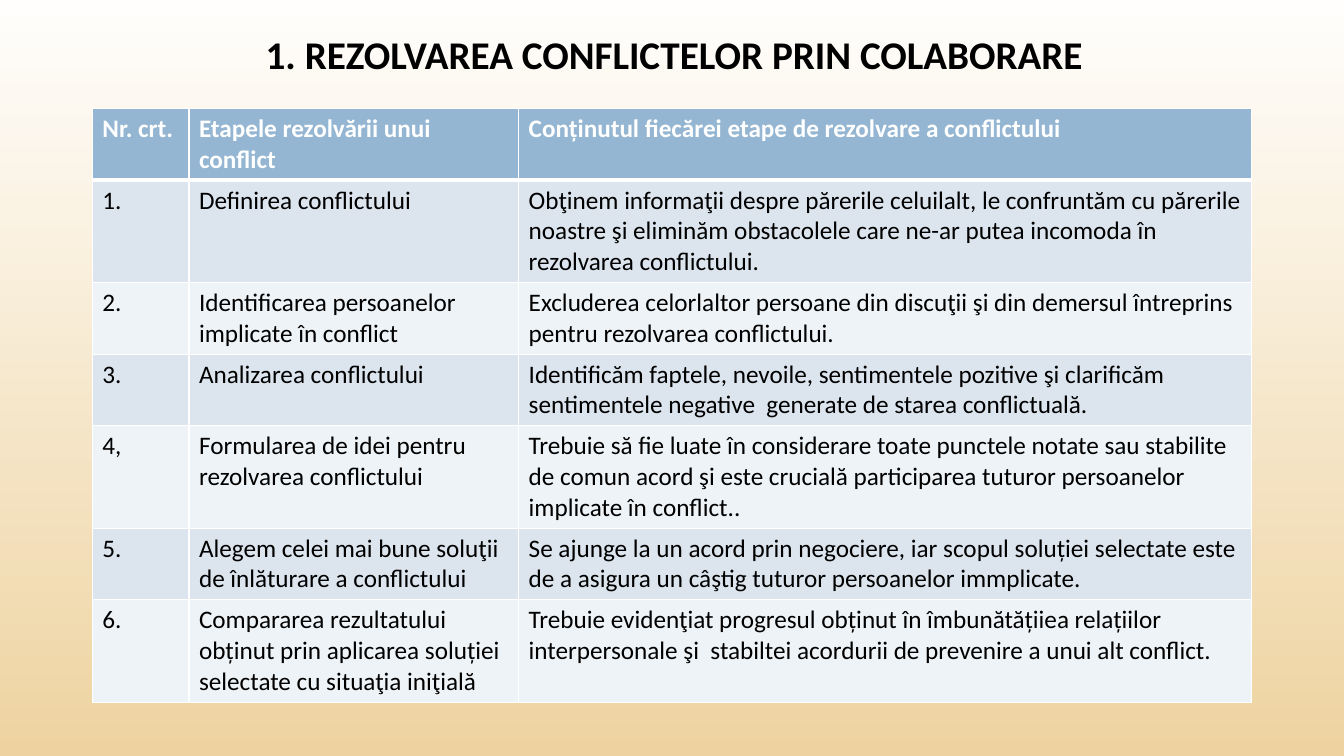
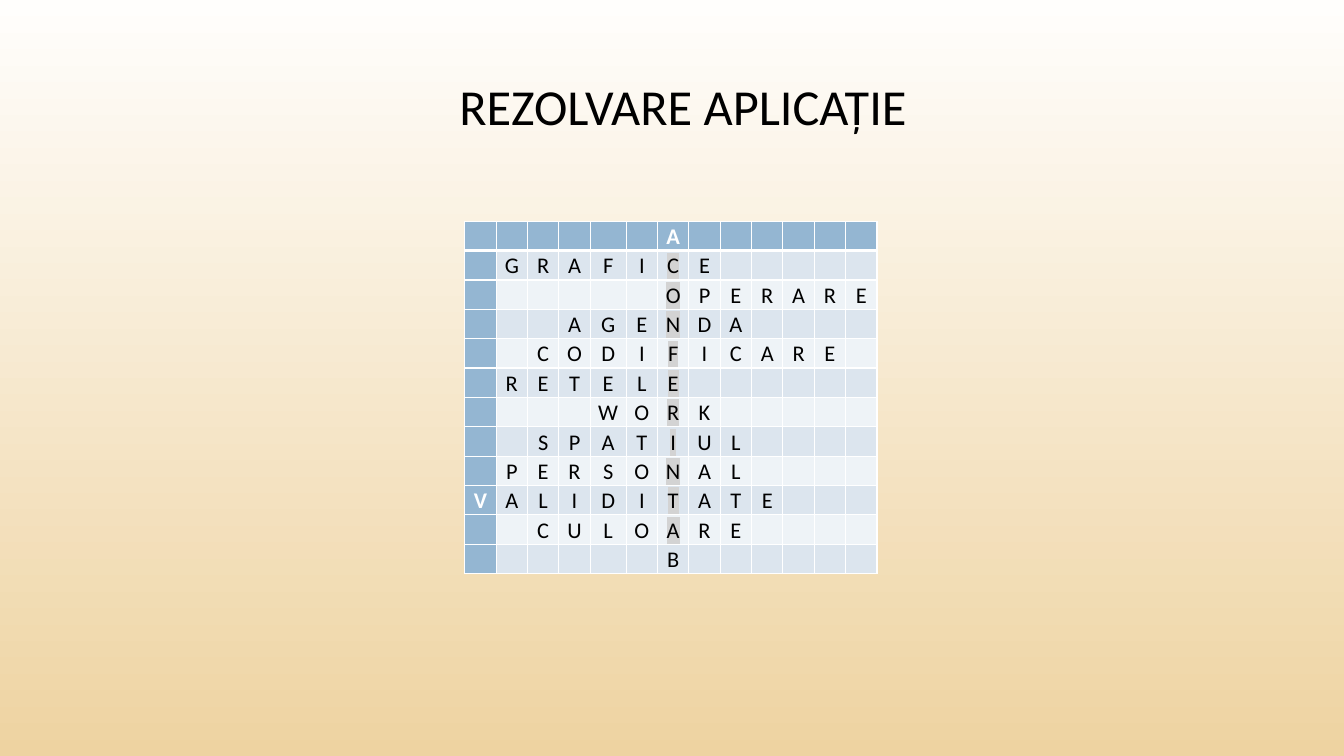
import pptx
import pptx.util
import pptx.dml.color
import pptx.enum.text
import pptx.oxml
import pptx.oxml.ns
from lxml import etree

Pt = pptx.util.Pt
FONT = "Calibri"
WHITE, BLACK = "FFFFFF", "000000"
HEADER, BANDS, HIGHLIGHT = "94B6D2", ("DCE5EE", "EEF3F7"), "D3D3D3"
SKY, SAND = "FFFEFC", "EED3A1"
CENTER = pptx.enum.text.PP_ALIGN.CENTER
MIDDLE = pptx.enum.text.MSO_ANCHOR.MIDDLE

STAGES = [
    ("Nr. crt.", "Etapele rezolvării unui conflict",
     "Conținutul fiecărei etape de rezolvare a conflictului"),
    ("1.", "Definirea conflictului",
     "Obţinem informaţii despre părerile celuilalt, le confruntăm cu părerile noastre şi "
     "eliminăm obstacolele care ne-ar putea incomoda în rezolvarea conflictului."),
    ("2.", "Identificarea persoanelor implicate în conflict",
     "Excluderea celorlaltor persoane din discuţii şi din demersul întreprins pentru "
     "rezolvarea conflictului."),
    ("3.", "Analizarea conflictului",
     "Identificăm faptele, nevoile, sentimentele pozitive şi clarificăm sentimentele "
     "negative  generate de starea conflictuală."),
    ("4,", "Formularea de idei pentru rezolvarea conflictului",
     "Trebuie să fie luate în considerare toate punctele notate sau stabilite de comun "
     "acord şi este crucială participarea tuturor persoanelor implicate în conflict.."),
    ("5.", "Alegem celei mai bune soluţii de înlăturare a conflictului",
     "Se ajunge la un acord prin negociere, iar scopul soluției selectate este de a "
     "asigura un câştig tuturor persoanelor immplicate."),
    ("6.", "Compararea rezultatului obținut prin aplicarea soluției selectate cu situaţia iniţială",
     "Trebuie evidenţiat progresul obținut în îmbunătățiiea relațiilor interpersonale şi  "
     "stabiltei acordurii de prevenire a unui alt conflict."),
]
STAGE_WIDTHS = [69, 235.5, 523.5]
STAGE_HEIGHTS = [51, 73, 51, 51, 73, 51, 73]

CROSSWORD = [(6, "A"), (1, "GRAFICE"), (6, "OPERARE"), (3, "AGENDA"), (2, "CODIFICARE"),
             (1, "RETELE"), (4, "WORK"), (2, "SPATIUL"), (1, "PERSONAL"),
             (0, "VALIDITATE"), (2, "CULOARE"), (6, "B")]
ANSWER_COLUMN = 6
LETTER_WIDTHS = [22.4] * 4 + [25.7] + [22.4] * 8


def color(value):
    return pptx.dml.color.RGBColor.from_string(value)


def add_run(paragraph, text, size, ink, bold=False, highlight=None):
    run = paragraph.add_run()
    run.text = text
    run.font.size = Pt(size)
    run.font.bold = bold
    run.font.color.rgb = color(ink)
    if highlight:
        properties = run._r.get_or_add_rPr()
        marker = etree.SubElement(properties, pptx.oxml.ns.qn("a:highlight"))
        etree.SubElement(marker, pptx.oxml.ns.qn("a:srgbClr"), val=highlight)
    run.font.name = FONT


def set_background(master):
    fill = master.background.fill
    fill.gradient()
    fill.gradient_angle = 270
    for stop, shade in zip(fill.gradient_stops, (SKY, SAND)):
        stop.color.rgb = color(shade)


def add_titled_slide(deck, text, box, size, bold=False):
    slide = deck.slides.add_slide(deck.slide_layouts[5])
    title = slide.shapes.title
    title.left, title.top, title.width, title.height = map(Pt, box)
    frame = title.text_frame
    frame.word_wrap = True
    frame.auto_size = pptx.enum.text.MSO_AUTO_SIZE.NONE
    frame.vertical_anchor = MIDDLE
    heading = frame.paragraphs[0]
    heading.alignment = CENTER
    heading.line_spacing = 0.9
    add_run(heading, text, size, BLACK, bold)
    return slide


def style_cell(cell, row, fill):
    properties = cell._tc.get_or_add_tcPr()
    widths = {"lnL": 1, "lnR": 1, "lnT": 3 if row == 1 else 1, "lnB": 3 if row == 0 else 1}
    for side, width in widths.items():
        properties.append(pptx.oxml.parse_xml(
            f'<a:{side} {pptx.oxml.ns.nsdecls("a")} w="{Pt(width)}">'
            f'<a:solidFill><a:srgbClr val="{WHITE}"/></a:solidFill></a:{side}>'))
    cell.fill.solid()
    cell.fill.fore_color.rgb = color(fill)


def add_grid(slide, left, top, widths, heights, header_column=False):
    table = slide.shapes.add_table(len(heights), len(widths), Pt(left), Pt(top),
                                   Pt(sum(widths)), Pt(sum(heights))).table
    table.horz_banding = False
    table.first_col = header_column
    for column, width in zip(table.columns, widths):
        column.width = Pt(width)
    for index, (row, height) in enumerate(zip(table.rows, heights)):
        row.height = Pt(height)
        for position, cell in enumerate(row.cells):
            is_header = index == 0 or (header_column and position == 0)
            style_cell(cell, index, HEADER if is_header else BANDS[(index - 1) % 2])
    return table


def fill_stages(table):
    for row, texts in enumerate(STAGES):
        for column, text in enumerate(texts):
            add_run(table.cell(row, column).text_frame.paragraphs[0], text, 18,
                    BLACK if row else WHITE, row == 0)


def fill_crossword(table):
    last = len(CROSSWORD) - 1
    for row, (start, word) in enumerate(CROSSWORD):
        letters = dict(enumerate(word, start))
        for column in range(len(LETTER_WIDTHS)):
            cell = table.cell(row, column)
            cell.margin_left = cell.margin_right = Pt(5)
            cell.margin_top = cell.margin_bottom = 0
            paragraph = cell.text_frame.paragraphs[0]
            paragraph.alignment = CENTER
            paragraph.line_spacing = 1.07
            if column in letters:
                is_header = row == 0 or column == 0
                marked = column == ANSWER_COLUMN and 0 < row < last
                add_run(paragraph, letters[column], 16, WHITE if is_header else BLACK,
                        is_header, HIGHLIGHT if marked else None)
            else:
                etree.SubElement(paragraph._p, pptx.oxml.ns.qn("a:endParaRPr"), sz="1600")


def main():
    deck = pptx.Presentation()
    deck.slide_width, deck.slide_height = Pt(960), Pt(540)
    set_background(deck.slide_master)

    stages = add_titled_slide(deck, "1. REZOLVAREA CONFLICTELOR PRIN COLABORARE",
                              (66, 13.5, 831, 54), 28, True)
    fill_stages(add_grid(stages, 66, 77.5, STAGE_WIDTHS, STAGE_HEIGHTS))

    solution = add_titled_slide(deck, "REZOLVARE APLICAȚIE", (88, 49, 800, 57.5), 36)
    fill_crossword(add_grid(solution, 332, 158, LETTER_WIDTHS, [21] * len(CROSSWORD), True))

    deck.save("out.pptx")


if __name__ == "__main__":
    main()
